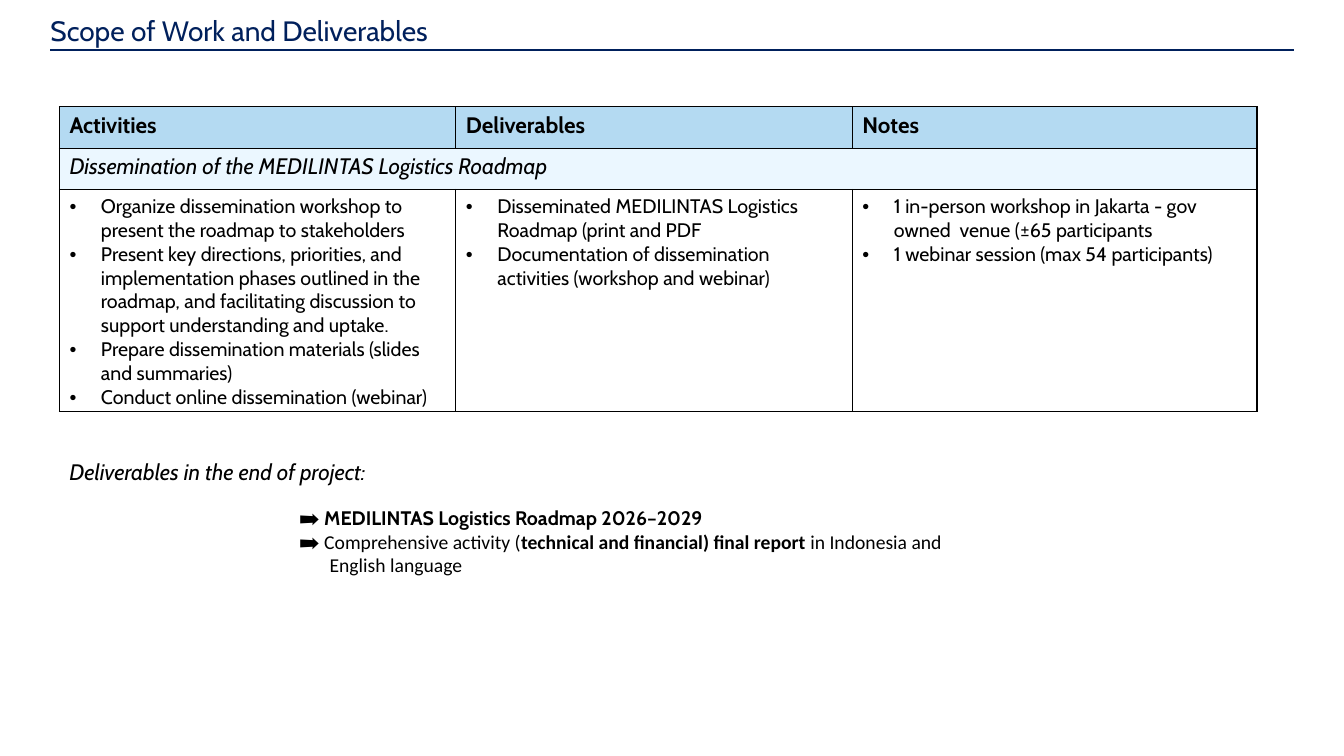
import pptx
import pptx.dml.color
import pptx.enum.shapes
import pptx.enum.text
import pptx.oxml
import pptx.oxml.ns
import pptx.util
from lxml import etree

theme = {
    "navy": "00205C", "black": "000000", "head": "B4DAF2", "band": "EBF7FF",
    "font": "Cabin", "alt": "Calibri",
    "title": 20, "label": 16, "body": 14,
}
ns = pptx.oxml.ns.nsdecls("a")
color = pptx.dml.color.RGBColor.from_string

deck = pptx.Presentation()
deck.slide_width = pptx.util.Inches(13.33)
deck.slide_height = pptx.util.Inches(7.5)
slide = deck.slides.add_slide(deck.slide_layouts[6])


def place(*shares):
    """Turn percentages of slide width and height, in turn, into lengths."""
    sides = (deck.slide_width, deck.slide_height) * 2
    return [pptx.util.Emu(int(side * share / 100)) for side, share in zip(sides, shares)]


def style(par, size, tone="black", font="font", bold=None, slant=None):
    par.font.size = pptx.util.Pt(theme[size])
    par.font.color.rgb = color(theme[tone])
    par.font.name = theme[font]
    par.font.bold = bold
    par.font.italic = slant


# Title rule
rule = slide.shapes.add_connector(
    pptx.enum.shapes.MSO_CONNECTOR.STRAIGHT, *place(3.75, 6.67, 96.25, 6.67))
rule.line.color.rgb = color(theme["navy"])
rule.line.width = pptx.util.Pt(1.5)
etree.SubElement(rule.element.spPr, pptx.oxml.ns.qn("a:effectLst"))

# Text boxes
frames = []
for spot in [(3.75, 2.27, 92.5, 6.27), (4.42, 60, 50.85, 4.93), (21.53, 66.27, 50, 10.8)]:
    frame = slide.shapes.add_textbox(*place(*spot)).text_frame
    frame.word_wrap = True
    frames.append(frame)
title, label, final = frames

# Title
title.margin_left = title.margin_right = title.margin_top = title.margin_bottom = 0
title.text = "Scope of Work and Deliverables"
title.paragraphs[0].line_spacing = 0.9
style(title.paragraphs[0], "title", "navy")

# Table
heads = ["Activities", "Deliverables", "Notes"]
lists = [
    ["Organize dissemination workshop to present the roadmap to stakeholders",
     "Present key directions, priorities, and implementation phases outlined in the "
     "roadmap, and facilitating discussion to support understanding and uptake.",
     "Prepare dissemination materials (slides and summaries)",
     "Conduct online dissemination (webinar)"],
    ["Disseminated MEDILINTAS Logistics Roadmap (print and PDF",
     "Documentation of dissemination activities (workshop and webinar)"],
    ["1 in-person workshop in Jakarta - gov owned  venue (±65 participants",
     "1 webinar session (max 54 participants)"],
]
table = slide.shapes.add_table(3, 3, *place(4.42, 14.13, 89.1, 40.14)).table
table.first_row = table.horz_banding = False
for col, share in zip(table.columns, [29.5, 29.5, 30.1]):
    col.width = place(share)[0]
for row, share in zip(table.rows, [5.47, 5.47, 29.2]):
    row.height = place(0, share)[1]

# Cell borders and fills
for r, row in enumerate(table.rows):
    for cell in row.cells:
        props = cell._tc.get_or_add_tcPr()
        for side in "LRTB":
            props.append(pptx.oxml.parse_xml(
                f'<a:ln{side} {ns} w="12700"><a:solidFill><a:srgbClr val="{theme["black"]}"/>'
                f'</a:solidFill></a:ln{side}>'))
        if r < 2:
            cell.fill.solid()
            cell.fill.fore_color.rgb = color(theme[["head", "band"][r]])
        else:
            cell.fill.background()

# Header and bulleted cells
indent = place(2.34)[0]
for c, (head, items) in enumerate(zip(heads, lists)):
    top = table.cell(0, c).text_frame
    top.text = head
    style(top.paragraphs[0], "label", bold=True)
    body = table.cell(2, c).text_frame
    body.text = "\n".join(items)
    for par in body.paragraphs:
        props = par._p.get_or_add_pPr()
        props.set("marL", str(indent))
        props.set("indent", str(-indent))
        props.append(pptx.oxml.parse_xml(f'<a:buFont {ns} typeface="Arial"/>'))
        props.append(pptx.oxml.parse_xml(f'<a:buChar {ns} char="•"/>'))
        style(par, "body")

# Section band
table.cell(1, 0).merge(table.cell(1, 2))
band = table.cell(1, 0).text_frame
band.text = "Dissemination of the MEDILINTAS Logistics Roadmap"
label.text = "Deliverables in the end of project:"
for frame in (band, label):
    style(frame.paragraphs[0], "label", slant=True)

# Final deliverables: text, font, bold
lines = [
    [("➡️ ", "font", False), ("MEDILINTAS Logistics Roadmap 2026–2029", "font", True)],
    [("➡️ ", "font", False), ("Comprehensive activity (", "alt", False),
     ("technical and financial) final report ", "alt", True),
     ("in Indonesia and", "alt", False)],
    [("English language", "alt", False)],
]
final.text = "\n" * (len(lines) - 1)
for par, line in zip(final.paragraphs, lines):
    style(par, "body", font=line[-1][1])
    for text, font, bold in line:
        run = par.add_run()
        run.text = text
        run.font.bold = bold
        if font != line[-1][1]:
            run.font.name = theme[font]
par._p.get_or_add_pPr().set("marL", str(place(2.25)[0]))

deck.save("out.pptx")
